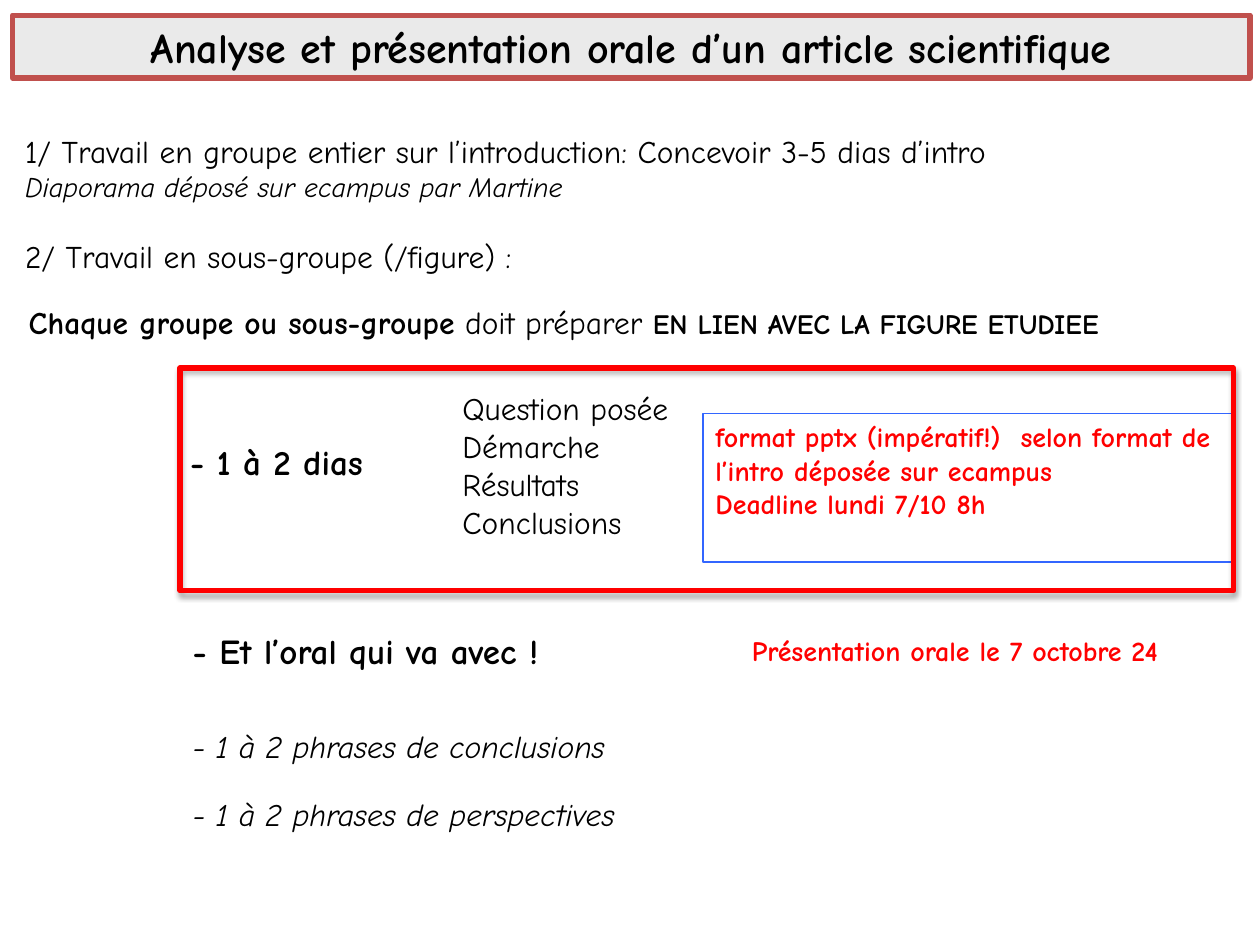
from dataclasses import dataclass

from lxml.etree import SubElement
from pptx import Presentation
from pptx.dml.color import RGBColor
from pptx.enum.shapes import MSO_SHAPE as Shape
from pptx.enum.text import MSO_ANCHOR as Anchor, MSO_AUTO_SIZE as AutoSize, PP_ALIGN as Align
from pptx.oxml.ns import qn
from pptx.util import Pt

EMU_PER_PX = 9144


@dataclass(frozen=True)
class Theme:
    font: str = "Comic Neue"
    ink: str = "000000"
    alert: str = "FF0000"
    banner_fill: str = "EAEAEA"
    banner_line: str = "C0504D"
    note_line: str = "3366FF"
    title: int = 24
    strong: int = 20
    text: int = 18
    small: int = 16
    thick: float = 3
    thin: float = 0.75


def px(*lengths):
    return [length * EMU_PER_PX for length in lengths]


class SlideBuilder:
    def __init__(self, presentation, theme):
        self.theme = theme
        self.slide = presentation.slides.add_slide(presentation.slide_layouts[1])

    def place(self, shape, box):
        shape.left, shape.top, shape.width, shape.height = px(*box)

    def outline(self, shape, color, width):
        shape.line.color.rgb = RGBColor.from_string(color)
        shape.line.width = Pt(width)

    def fill_text(self, shape, paragraphs, color=None, anchor=Anchor.TOP):
        frame = shape.text_frame
        frame.word_wrap = True
        frame.auto_size = AutoSize.NONE
        frame.vertical_anchor = anchor
        for index, runs in enumerate(paragraphs):
            paragraph = frame.add_paragraph() if index else frame.paragraphs[0]
            paragraph.alignment = Align.LEFT
            paragraph.space_before = Pt(0)
            for text, size, bold, italic in runs:
                run = paragraph.add_run()
                run.text = text
                font = run.font
                font.name, font.size = self.theme.font, Pt(size)
                font.bold, font.italic = bold, italic
                font.color.rgb = RGBColor.from_string(color or self.theme.ink)

    def title(self, text, box):
        shape = self.slide.shapes.title
        self.place(shape, box)
        shape.fill.solid()
        shape.fill.fore_color.rgb = RGBColor.from_string(self.theme.banner_fill)
        self.outline(shape, self.theme.banner_line, self.theme.thick)
        self.fill_text(shape, [[(text, self.theme.title, True, False)]], anchor=Anchor.MIDDLE)
        shape.text_frame.paragraphs[0].alignment = Align.CENTER

    def body_list(self, items, box):
        shape = self.slide.placeholders[1]
        self.place(shape, box)
        self.fill_text(shape, [[(item, self.theme.text, False, False)] for item in items])
        for paragraph in shape.text_frame.paragraphs:
            properties = paragraph._p.get_or_add_pPr()
            properties.set("marL", "0")
            properties.set("indent", "0")
            SubElement(properties, qn("a:buNone"))

    def text(self, paragraphs, box, color=None):
        self.fill_text(self.slide.shapes.add_textbox(*px(*box)), paragraphs, color)

    def rectangle(self, box, color, width):
        shape = self.slide.shapes.add_shape(Shape.RECTANGLE, *px(*box))
        shape.fill.background()
        shape.shadow.inherit = False
        self.outline(shape, color, width)
        return shape

    def note(self, paragraphs, box):
        shape = self.rectangle(box, self.theme.note_line, self.theme.thin)
        self.fill_text(shape, paragraphs, self.theme.alert)

    def shadowed_frame(self, box):
        shape = self.rectangle(box, self.theme.alert, self.theme.thick)
        effects = shape._element.spPr.find(qn("a:effectLst"))
        shadow = SubElement(effects, qn("a:outerShdw"), blurRad="40000", dist="23000",
                            dir="5400000", rotWithShape="0")
        color = SubElement(shadow, qn("a:srgbClr"), val=self.theme.ink)
        SubElement(color, qn("a:alpha"), val="35000")


def main():
    presentation = Presentation()
    presentation.slide_width, presentation.slide_height = px(1000, 750)
    theme = Theme()
    builder = SlideBuilder(presentation, theme)

    builder.title("Analyse et présentation orale d’un article scientifique", (10, 12, 982, 50))
    builder.text([
        [("1/ Travail en groupe entier sur l’introduction: Concevoir 3-5 dias d’intro",
          theme.text, False, False)],
        [("Diaporama déposé sur ecampus par Martine", theme.small, False, True)],
    ], (10, 100, 982, 67))
    builder.text([[("2/ Travail en sous-groupe (/figure) :", theme.text, False, False)]],
                 (10, 183, 982, 101))
    builder.text([[
        ("Chaque groupe ou sous-groupe", theme.text, True, False),
        (" doit préparer ", theme.text, False, False),
        ("EN LIEN AVEC LA FIGURE ETUDIEE", theme.small, True, False),
    ]], (13, 236, 1000, 40))

    builder.body_list(["Question posée", "Démarche", "Résultats", "Conclusions"],
                      (357, 304, 201, 131))
    for text, box, size, bold in [
        ("- 1 à 2 dias", (141, 345, 189, 44), theme.strong, True),
        ("- Et l’oral qui va avec !", (143, 495, 339, 44), theme.strong, True),
        ("- 1 à 2 phrases de conclusions", (143, 572, 375, 40), theme.text, False),
        ("- 1 à 2 phrases de perspectives", (143, 626, 394, 40), theme.text, False),
    ]:
        builder.text([[(text, size, bold, not bold)]], box)

    builder.note([
        [("format pptx (impératif!)  selon format de l’intro déposée sur ecampus",
          theme.small, True, False)],
        [("Deadline lundi 7/10 8h", theme.small, True, False)],
    ], (558, 328, 422, 118))
    builder.shadowed_frame((143, 292, 836, 177))
    builder.text([[("Présentation orale le 7 octobre 24", theme.small, True, False)]],
                 (587, 498, 414, 37), theme.alert)

    presentation.save("out.pptx")


if __name__ == "__main__":
    main()
